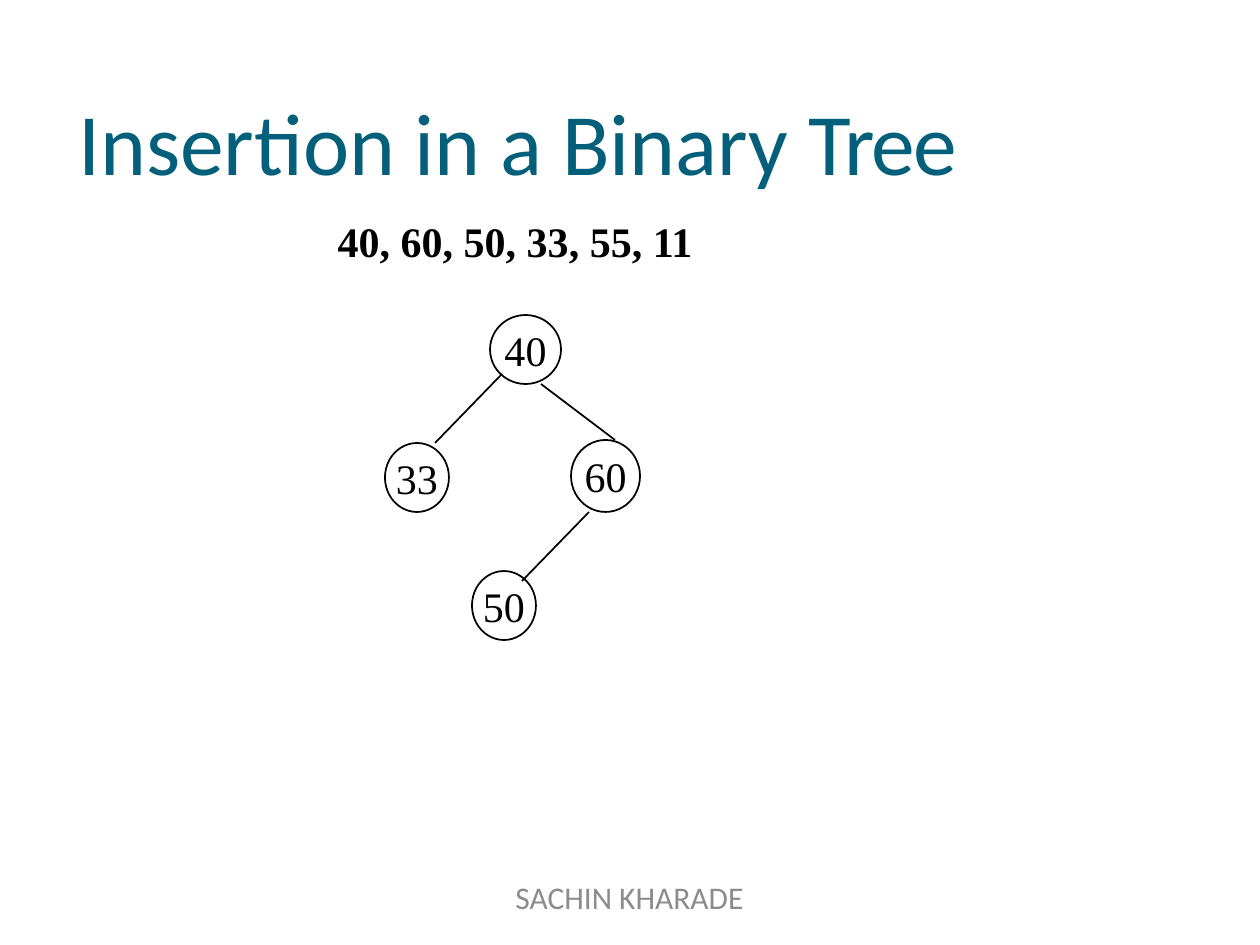
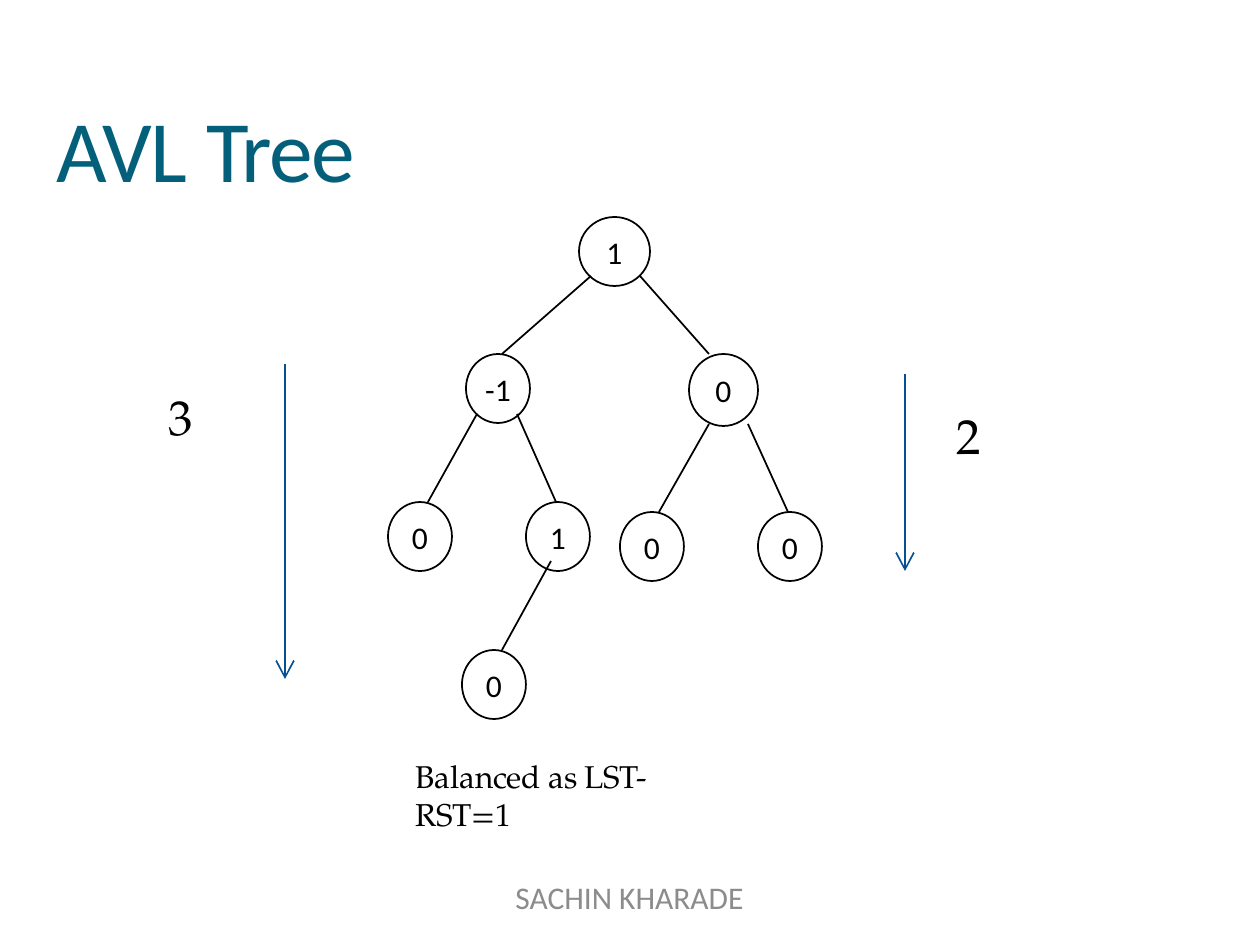
from lxml import etree
from pptx import Presentation, util as u
from pptx.dml.color import RGBColor
from pptx.enum import shapes, text
from pptx.oxml.ns import qn

BLACK, TEAL, GREY, BLUE = "000000", "04607A", "8C8C8C", "055092"
SANS, SERIF, BOOK = "Calibri", "Times New Roman", "TeX Gyre Pagella"
CENTER, LEFT = text.PP_ALIGN.CENTER, text.PP_ALIGN.LEFT
PX_PER_INCH = 126

# Node sizes in px
ROOT, RIGHT, SMALL = (71, 69), (69, 72), (64, 69)


def px(n):
    return u.Emu(round(n * 914400 / PX_PER_INCH))


def rgb(color):
    return RGBColor.from_string(color)


def write(sp, runs, font, size, color=BLACK, align=LEFT, bold=False,
          anchor=text.MSO_ANCHOR.TOP, wrap=True):
    """Fill a shape with one paragraph of (text, letter spacing) runs."""
    tf = sp.text_frame
    tf.margin_left = tf.margin_top = tf.margin_right = tf.margin_bottom = 0
    tf.auto_size = text.MSO_AUTO_SIZE.NONE
    tf.word_wrap, tf.vertical_anchor = wrap, anchor
    p = tf.paragraphs[0]
    p.alignment = align
    p.font.name, p.font.size, p.font.bold = font, u.Pt(size), bold
    p.font.color.rgb = rgb(color)
    for words, spacing in runs:
        r = p.add_run()
        r.text = words
        if spacing:
            r.font._element.set("spc", str(round(spacing * 100)))


def add_label(s, box, words, font, size, spacing=0, **style):
    sp = s.shapes.add_textbox(*map(px, box))
    write(sp, [(words, spacing)], font, size, **style)


def add_titled_slide(prs, box, runs, align=LEFT):
    s = prs.slides.add_slide(prs.slide_layouts[5])
    sp = s.shapes.title
    sp.left, sp.top, sp.width, sp.height = map(px, box)
    write(sp, runs, SANS, 50, TEAL, align)
    add_label(s, (428, 878, 403, 48), "SACHIN KHARADE", SANS, 18,
              color=GREY, align=CENTER)
    return s


def add_node(s, value, left, top, size, font, points):
    sp = s.shapes.add_shape(shapes.MSO_SHAPE.OVAL,
                            *map(px, (left, top, *size)))
    sp.shadow.inherit = False
    sp.fill.background()
    sp.line.color.rgb, sp.line.width = rgb(BLACK), u.Pt(1)
    write(sp, [(value, 0)], font, points, align=CENTER,
          anchor=text.MSO_ANCHOR.MIDDLE, wrap=False)


def add_line(s, ends, color=BLACK, arrow=False):
    cx = s.shapes.add_connector(shapes.MSO_CONNECTOR.STRAIGHT, *map(px, ends))
    cx.line.color.rgb, cx.line.width = rgb(color), u.Pt(1)
    if arrow:
        etree.SubElement(cx.line._get_or_add_ln(), qn("a:tailEnd"),
                         type="arrow", w="lg", len="lg")
    etree.SubElement(cx._element.spPr, qn("a:effectLst"))


def add_tree(s, nodes, edges, font, points):
    for node in nodes:
        add_node(s, *node, font, points)
    for ends in edges:
        add_line(s, ends)


def binary_tree_slide(prs):
    s = add_titled_slide(prs, (74, 88, 888, 110),
                         [("Insertion ", -0.1), ("in a Binary ", 0),
                          ("Tree", -1)], CENTER)
    # Inserted values
    add_label(s, (315, 216, 400, 48), "40, 60, 50, 33, 55, 11", SERIF, 24,
              align=CENTER, bold=True)
    nodes = [("40", 490, 315, ROOT), ("60", 571, 440, RIGHT),
             ("33", 385, 443, SMALL), ("50", 472, 571, SMALL)]
    edges = [(541, 384, 615, 440), (502, 374, 435, 443),
             (589, 512, 522, 581)]
    add_tree(s, nodes, edges, SERIF, 24)


def avl_tree_slide(prs):
    s = add_titled_slide(prs, (57, 95, 310, 108),
                         [("AVL ", -0.8), ("Tree", -0.9)])
    # Balance factors
    nodes = [("1", 579, 217, ROOT),
             ("-1", 466, 354, SMALL), ("0", 689, 354, RIGHT),
             ("0", 388, 502, SMALL), ("1", 526, 502, SMALL),
             ("0", 620, 512, SMALL), ("0", 758, 512, SMALL),
             ("0", 462, 650, SMALL)]
    edges = [(591, 276, 502, 354), (640, 276, 709, 354),
             (477, 414, 428, 502), (517, 414, 556, 502),
             (709, 424, 659, 512), (748, 424, 788, 512),
             (551, 561, 502, 650)]
    add_tree(s, nodes, edges, SANS, 18)
    # Subtree heights
    for height, left, top, arrow in [("3", 169, 387, (285, 364, 285, 679)),
                                     ("2", 957, 406, (905, 374, 905, 571))]:
        add_label(s, (left, top, 27, 62), height, BOOK, 28, wrap=False)
        add_line(s, arrow, BLUE, arrow=True)
    add_label(s, (416, 757, 300, 76), "Balanced as LST-RST=1", BOOK, 18, -0.1)


def main():
    prs = Presentation()
    prs.slide_width, prs.slide_height = u.Inches(10), u.Inches(7.5)
    binary_tree_slide(prs)
    avl_tree_slide(prs)
    prs.save("out.pptx")


if __name__ == "__main__":
    main()
